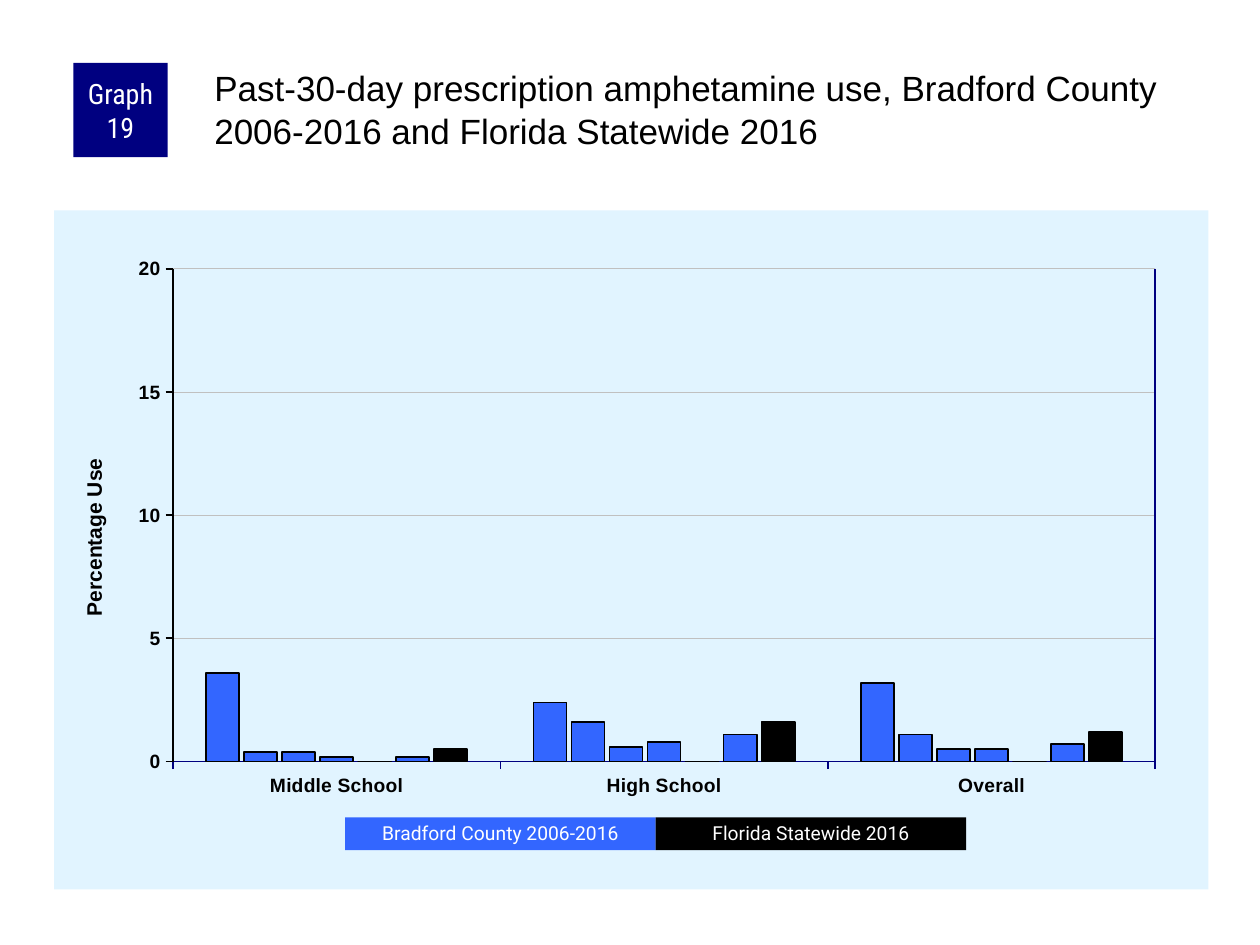
from dataclasses import dataclass

from lxml.etree import _Element
from pptx import Presentation
from pptx.chart.data import CategoryChartData
from pptx.dml.color import RGBColor
from pptx.enum.chart import XL_CHART_TYPE as ChartType, XL_TICK_MARK as Tick
from pptx.enum.shapes import MSO_CONNECTOR as Connector, MSO_SHAPE as Shape
from pptx.enum.text import MSO_ANCHOR as Anchor, MSO_AUTO_SIZE as AutoSize, PP_ALIGN as Align
from pptx.oxml import parse_xml
from pptx.oxml.ns import nsdecls, qn
from pptx.util import Cm, Pt

NAVY = RGBColor(0x00, 0x00, 0x80)
BLUE = RGBColor(0x33, 0x66, 0xFF)
PALE = RGBColor(0xE1, 0xF4, 0xFF)
GRAY = RGBColor(0xC0, 0xC0, 0xC0)
BLACK = RGBColor(0x00, 0x00, 0x00)
WHITE = RGBColor(0xFF, 0xFF, 0xFF)

CHART_X, CHART_Y, CHART_W, CHART_H = 1.09, 4.24, 23.27, 13.69
PLOT_X, PLOT_Y, PLOT_W, PLOT_H = 0.103, 0.086, 0.851, 0.726


@dataclass
class Label:
    text: str
    x: float
    y: float
    w: float
    h: float
    fill: RGBColor
    font: str
    size: int
    margin: float = 0.25
    spacing: float = 1.0


@dataclass
class Series:
    name: str
    values: tuple[float, ...]
    color: RGBColor = BLUE


LABELS = [
    Label("Graph 19", 1.48, 1.27, 1.9, 1.9, NAVY, "Roboto Condensed", 16, margin=0.13),
    Label("Bradford County 2006-2016", 6.96, 16.48, 6.26, 0.66, BLUE, "Roboto", 11, spacing=0.9),
    Label("Florida Statewide 2016", 13.22, 16.48, 6.26, 0.66, BLACK, "Roboto", 11, spacing=0.9),
]

CATEGORIES = ["Middle School", "High School", "Overall"]
SERIES = [
    Series("Series 1", (3.6, 2.4, 3.2)),
    Series("Series 2", (0.4, 1.6, 1.1)),
    Series("Series 3", (0.4, 0.6, 0.5)),
    Series("Series 4", (0.2, 0.8, 0.5)),
    Series("Series 5", (0, 0, 0)),
    Series("Series 6", (0.2, 1.1, 0.7)),
    Series("Series 7", (0.5, 1.6, 1.2), BLACK),
]


def style_font(font, name: str, size: int, color: RGBColor, bold: bool = False) -> None:
    font.name = name
    font.size = Pt(size)
    font.bold = bold
    font.color.rgb = color


def style_line(line, color: RGBColor, width: float) -> None:
    line.color.rgb = color
    line.width = Pt(width)


def add_title(s, text: str) -> None:
    sp = s.shapes.title
    sp.left, sp.top, sp.width, sp.height = Cm(4.24), Cm(1.27), Cm(20.12), Cm(2.11)
    tf = sp.text_frame
    tf.word_wrap = True
    tf.auto_size = AutoSize.NONE
    tf.vertical_anchor = Anchor.TOP
    tf.margin_left = tf.margin_top = Cm(0.08)
    tf.margin_right = tf.margin_bottom = 0
    p = tf.paragraphs[0]
    p.alignment = Align.LEFT
    r = p.add_run()
    r.text = text
    style_font(r.font, "Arial", 20, BLACK)


def add_label(s, label: Label) -> None:
    sp = s.shapes.add_shape(Shape.RECTANGLE, Cm(label.x), Cm(label.y), Cm(label.w), Cm(label.h))
    sp.shadow.inherit = False
    sp.fill.solid()
    sp.fill.fore_color.rgb = label.fill
    sp.line.fill.background()
    tf = sp.text_frame
    tf.word_wrap = True
    tf.vertical_anchor = Anchor.MIDDLE
    tf.margin_left = tf.margin_right = Cm(label.margin)
    tf.margin_top = tf.margin_bottom = 0
    p = tf.paragraphs[0]
    p.alignment = Align.CENTER
    p.line_spacing = label.spacing
    r = p.add_run()
    r.text = label.text
    style_font(r.font, label.font, label.size, WHITE)


def make_layout(target: str, **places: float) -> _Element:
    modes = "".join(f'<c:{k}Mode val="edge"/>' for k in ("x", "y"))
    values = "".join(f'<c:{k} val="{v}"/>' for k, v in places.items())
    return parse_xml(
        f'<c:layout {nsdecls("c")}><c:manualLayout>{target}{modes}{values}'
        "</c:manualLayout></c:layout>"
    )


def set_layout(parent: _Element, layout: _Element, index: int) -> None:
    for old in parent.findall(qn("c:layout")):
        parent.remove(old)
    parent.insert(index, layout)


def style_axis(axis, line_color: RGBColor) -> None:
    axis.major_tick_mark = Tick.OUTSIDE
    axis.minor_tick_mark = Tick.NONE
    style_font(axis.tick_labels.font, "Arial", 11, BLACK, bold=True)
    style_line(axis.format.line, line_color, 1)


def add_chart(s) -> None:
    data = CategoryChartData()
    data.categories = CATEGORIES
    for series in SERIES:
        data.add_series(series.name, series.values)
    chart = s.shapes.add_chart(
        ChartType.COLUMN_CLUSTERED, Cm(CHART_X), Cm(CHART_Y), Cm(CHART_W), Cm(CHART_H), data
    ).chart
    chart.has_legend = False
    chart.has_title = False
    style_font(chart.font, "Arial", 8, BLACK)
    chart.element.find(qn("c:txPr")).addprevious(parse_xml(
        f'<c:spPr {nsdecls("c", "a")}><a:solidFill><a:srgbClr val="{PALE}"/></a:solidFill>'
        "<a:ln><a:noFill/></a:ln></c:spPr>"
    ))

    plot = chart.plots[0]
    plot.gap_width = 200
    plot.overlap = -15
    plot.vary_by_categories = False
    for bars, series in zip(plot.series, SERIES):
        bars.format.fill.solid()
        bars.format.fill.fore_color.rgb = series.color
        style_line(bars.format.line, BLACK, 1)

    style_axis(chart.category_axis, NAVY)
    axis = chart.value_axis
    style_axis(axis, BLACK)
    axis.minimum_scale, axis.maximum_scale, axis.major_unit = 0, 20, 5
    axis.tick_labels.number_format = "0"
    axis.tick_labels.number_format_is_linked = False
    style_line(axis.major_gridlines.format.line, GRAY, 0.25)
    r = axis.axis_title.text_frame.paragraphs[0].add_run()
    r.text = "Percentage Use"
    style_font(r.font, "Arial", 12, BLACK, bold=True)

    set_layout(axis.axis_title._element, make_layout("", x=0.02, y=0.36), 1)
    inner = make_layout('<c:layoutTarget val="inner"/>', x=PLOT_X, y=PLOT_Y, w=PLOT_W, h=PLOT_H)
    set_layout(chart.element.find(".//" + qn("c:plotArea")), inner, 0)


def add_right_border(s) -> None:
    x = Cm(CHART_X + CHART_W * (PLOT_X + PLOT_W))
    top = Cm(CHART_Y + CHART_H * PLOT_Y)
    bottom = Cm(CHART_Y + CHART_H * (PLOT_Y + PLOT_H))
    line = s.shapes.add_connector(Connector.STRAIGHT, x, top, x, bottom)
    style_line(line.line, NAVY, 1)
    line._element.spPr.append(parse_xml(f'<a:effectLst {nsdecls("a")}/>'))


def main() -> None:
    prs = Presentation()
    prs.slide_width, prs.slide_height = Cm(25.4), Cm(19.05)
    s = prs.slides.add_slide(prs.slide_layouts[5])
    add_title(s, "Past-30-day prescription amphetamine use, Bradford County "
                 "2006-2016 and Florida Statewide 2016")
    add_chart(s)
    add_right_border(s)
    for label in LABELS:
        add_label(s, label)
    prs.save("out.pptx")


if __name__ == "__main__":
    main()
